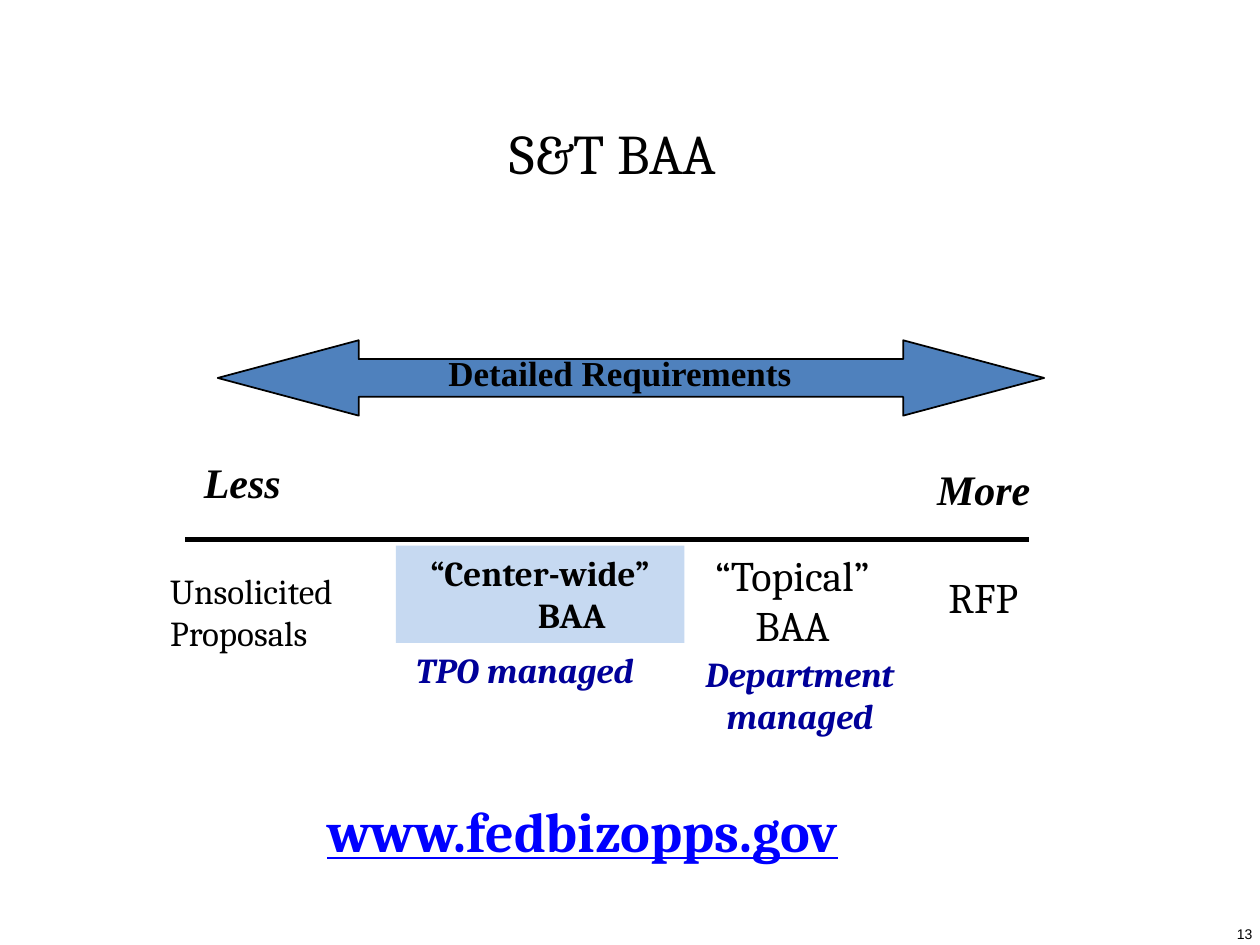
from pptx import Presentation
from pptx.dml.color import RGBColor
from pptx.enum.shapes import MSO_CONNECTOR, MSO_SHAPE
from pptx.enum.text import MSO_ANCHOR, MSO_AUTO_SIZE, PP_ALIGN
from pptx.oxml.ns import qn
from pptx.util import Cm, Pt
from lxml import etree

LEFT, CENTER, RIGHT = PP_ALIGN.LEFT, PP_ALIGN.CENTER, PP_ALIGN.RIGHT
TOP = MSO_ANCHOR.TOP
FIT = MSO_AUTO_SIZE.SHAPE_TO_FIT_TEXT
ARROW, RECTANGLE = MSO_SHAPE.LEFT_RIGHT_ARROW, MSO_SHAPE.RECTANGLE
STRAIGHT = MSO_CONNECTOR.STRAIGHT


def colour(value):
    return RGBColor.from_string(value)


class SlideBuilder:
    serif = "Cambria"
    roman = "Times New Roman"
    sans = "Arial"
    black = "000000"
    navy = "000099"
    link = "0000FF"
    arrow_blue = "4F81BD"
    pale_blue = "C6D9F1"

    def __init__(self, page):
        self.page = page

    def fill_text(self, shape, text, size, font, ink, align, wrap, bold, italic, underline):
        frame = shape.text_frame
        frame.text = text
        frame.word_wrap = wrap
        frame.auto_size = FIT
        frame.vertical_anchor = TOP
        for para in frame.paragraphs:
            para.alignment = align
            for span in para.runs:
                span.font.name = font
                span.font.size = Pt(size)
                span.font.bold = bold
                span.font.italic = italic
                span.font.underline = underline
                span.font.color.rgb = colour(ink)

    def text(self, place, text, size, font=serif, ink=black, align=LEFT,
             wrap=False, bold=False, italic=False, underline=False):
        box = self.page.shapes.add_textbox(*map(Cm, place))
        self.fill_text(box, text, size, font, ink, align, wrap, bold, italic, underline)

    def shape(self, kind, place, fill, outline=None):
        shape = self.page.shapes.add_shape(kind, *map(Cm, place))
        shape.shadow.inherit = False
        shape.fill.solid()
        shape.fill.fore_color.rgb = colour(fill)
        if outline:
            shape.line.color.rgb = colour(outline)
            shape.line.width = Pt(1)
        else:
            shape.line.fill.background()
        return shape

    def arrow(self, place):
        arrow = self.shape(ARROW, place, self.arrow_blue, self.black)
        arrow.adjustments[0] = 0.5
        arrow.adjustments[1] = 1.87

    def panel(self, place, text, size, hanging):
        panel = self.shape(RECTANGLE, place, self.pale_blue)
        self.fill_text(panel, text, size, self.serif, self.black, CENTER, True, True, False, False)
        for index, para in enumerate(panel.text_frame.paragraphs):
            properties = para._p.get_or_add_pPr()
            properties.set("marL", str(Cm(hanging)))
            properties.set("indent", str(0 if index else -Cm(hanging)))

    def rule(self, left, right, top):
        rule = self.page.shapes.add_connector(STRAIGHT, Cm(left), Cm(top), Cm(right), Cm(top))
        rule.line.color.rgb = colour(self.black)
        rule.line.width = Pt(3)
        etree.SubElement(rule._element.spPr, qn("a:effectLst"))


def main():
    deck = Presentation()
    deck.slide_width, deck.slide_height = Cm(25.4), Cm(19.05)
    builder = SlideBuilder(deck.slides.add_slide(deck.slide_layouts[6]))
    roman, navy = builder.roman, builder.navy

    builder.text((24.64, 18.54, 0.86, 0.58), "13", 8, font=builder.sans, align=RIGHT)
    builder.text((10.03, 2.26, 4.9, 1.63), "S&T BAA", 32)

    builder.arrow((4.39, 6.86, 16.66, 1.52))
    builder.text((8.79, 6.96, 7.47, 1.12), "Detailed Requirements", 20, font=roman, bold=True)
    builder.rule(3.73, 20.75, 10.87)
    builder.text((3.86, 9.07, 2.08, 1.27), "Less", 24, font=roman, bold=True, italic=True)
    builder.text((18.64, 9.22, 2.41, 1.27), "More", 24, font=roman, bold=True, italic=True)

    builder.text((3.18, 11.35, 4.09, 1.96), "Unsolicited\nProposals", 20)
    builder.panel((7.98, 11, 5.82, 1.96), "“Center-wide”\nBAA", 20, hanging=1.27)
    builder.text((13.31, 10.95, 5.33, 2.31), "“Topical”\nBAA", 24, align=CENTER, wrap=True)
    builder.text((18.87, 11.4, 2.03, 1.27), "RFP", 24)

    builder.text((8.08, 12.95, 5, 1.12), "TPO managed", 20, ink=navy,
                 align=CENTER, bold=True, italic=True)
    builder.text((13, 13.03, 6.25, 1.96), "Department\nmanaged", 20, ink=navy,
                 align=CENTER, wrap=True, bold=True, italic=True)
    builder.text((6.35, 15.93, 11.28, 1.63), "www.fedbizopps.gov", 32,
                 ink=builder.link, bold=True, underline=True)

    deck.save("out.pptx")


if __name__ == "__main__":
    main()
